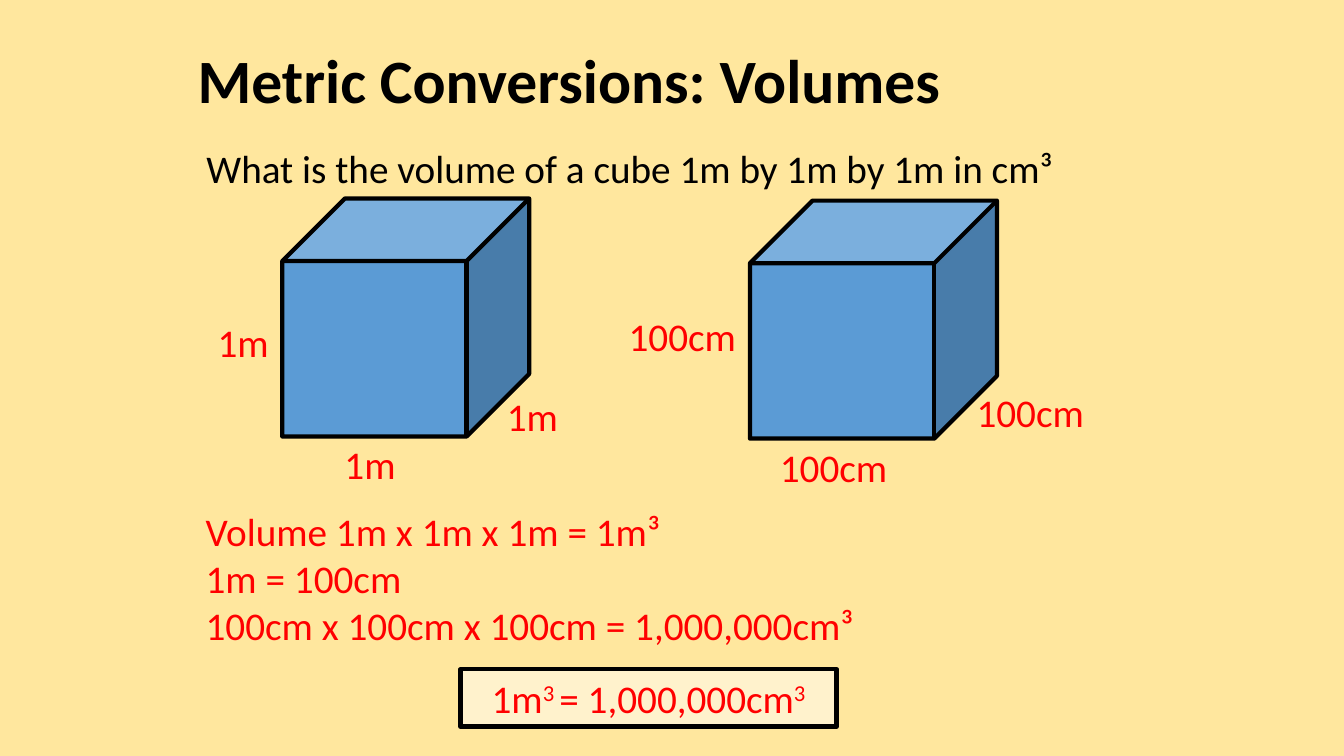
from lxml import etree
from pptx import Presentation
from pptx.dml.color import RGBColor
from pptx.enum.shapes import MSO_SHAPE
from pptx.enum.text import MSO_ANCHOR, MSO_AUTO_SIZE, PP_ALIGN
from pptx.oxml.ns import qn
from pptx.util import Pt

CUBE, RECTANGLE = MSO_SHAPE.CUBE, MSO_SHAPE.RECTANGLE
TOP, MIDDLE = MSO_ANCHOR.TOP, MSO_ANCHOR.MIDDLE
NO_AUTOSIZE = MSO_AUTO_SIZE.NONE
LEFT, CENTER = PP_ALIGN.LEFT, PP_ALIGN.CENTER

COLORS = {
    "background": "FFE79E",
    "text": "000000",
    "answer": "FF0000",
    "cube": "5B9BD5",
    "result": "FFF2CC",
    "outline": "000000",
}
FONT = "Calibri"
TEXT_SIZE = 28
LINE_HEIGHT = 41
CUBE_SIZE = (176.4, 170)

# Each cube: position, edge length, label width, label positions (height, width, depth)
CUBES = [
    ((201.6, 141.8), "1m", 52, [(148.3, 223.9), (239, 311), (355, 276.5)]),
    ((535.7, 143.3), "100cm", 92, [(442, 219.6), (550, 313.2), (690.5, 273.6)]),
]
WORKING = [
    "Volume 1m x 1m x 1m = 1m³",
    "1m = 100cm",
    "100cm x 100cm x 100cm = 1,000,000cm³",
]
RESULT = [("1m", False), ("3 ", True), ("= 1,000,000cm", False), ("3", True)]


def rgb(name):
    return RGBColor.from_string(COLORS[name])


def style_run(run, color, size=TEXT_SIZE, bold=False):
    run.font.name = FONT
    run.font.size = Pt(size)
    run.font.bold = bold
    run.font.color.rgb = rgb(color)


def fill_placeholder(holder, box, lines, color, size=TEXT_SIZE, bold=False, anchor=TOP):
    """Move a placeholder and set its lines flush left, without bullets."""
    holder.left, holder.top, holder.width, holder.height = map(Pt, box)
    frame = holder.text_frame
    frame.text = "\n".join(lines)
    frame.auto_size = NO_AUTOSIZE
    frame.vertical_anchor = anchor
    for paragraph in frame.paragraphs:
        properties = paragraph._p.get_or_add_pPr()
        properties.set("marL", "0")
        properties.set("indent", "0")
        etree.SubElement(properties, qn("a:buNone"))
        paragraph.alignment = LEFT
        paragraph.space_before = Pt(0)
        style_run(paragraph.runs[0], color, size, bold)


def add_text(slide, box, text, color, wrap):
    frame = slide.shapes.add_textbox(*map(Pt, box)).text_frame
    frame.word_wrap = wrap
    frame.text = text
    style_run(frame.paragraphs[0].runs[0], color)


def add_outlined_shape(slide, kind, box, fill):
    shape = slide.shapes.add_shape(kind, *map(Pt, box))
    shape.shadow.inherit = False
    shape.fill.solid()
    shape.fill.fore_color.rgb = rgb(fill)
    shape.line.color.rgb = rgb("outline")
    shape.line.width = Pt(3)
    return shape


def add_labelled_cube(slide, position, edge, label_width, label_positions):
    cube = add_outlined_shape(slide, CUBE, (*position, *CUBE_SIZE), "cube")
    cube.adjustments[0] = 0.263
    for label_position in label_positions:
        add_text(slide, (*label_position, label_width, LINE_HEIGHT), edge, "answer", False)


def add_result(slide, box, parts):
    frame = add_outlined_shape(slide, RECTANGLE, box, "result").text_frame
    frame.vertical_anchor = MIDDLE
    paragraph = frame.paragraphs[0]
    paragraph.alignment = CENTER
    for text, raised in parts:
        run = paragraph.add_run()
        run.text = text
        style_run(run, "answer")
        if raised:
            run._r.get_or_add_rPr().set("baseline", "30000")


def main():
    presentation = Presentation()
    presentation.slide_width, presentation.slide_height = Pt(960), Pt(540)
    slide = presentation.slides.add_slide(presentation.slide_layouts[1])
    slide.background.fill.solid()
    slide.background.fill.fore_color.rgb = rgb("background")

    title, working = slide.placeholders
    fill_placeholder(title, (133.9, 25.9, 571, 60.5), ["Metric Conversions: Volumes"],
                     "text", size=44, bold=True, anchor=MIDDLE)
    fill_placeholder(working, (139.7, 358.6, 655, 108.7), WORKING, "answer")
    add_text(slide, (140.4, 99.4, 679, LINE_HEIGHT),
             "What is the volume of a cube 1m by 1m by 1m in cm³", "text", True)
    for cube in CUBES:
        add_labelled_cube(slide, *cube)
    add_result(slide, (329, 478, 268.6, LINE_HEIGHT), RESULT)
    presentation.save("out.pptx")


if __name__ == "__main__":
    main()
